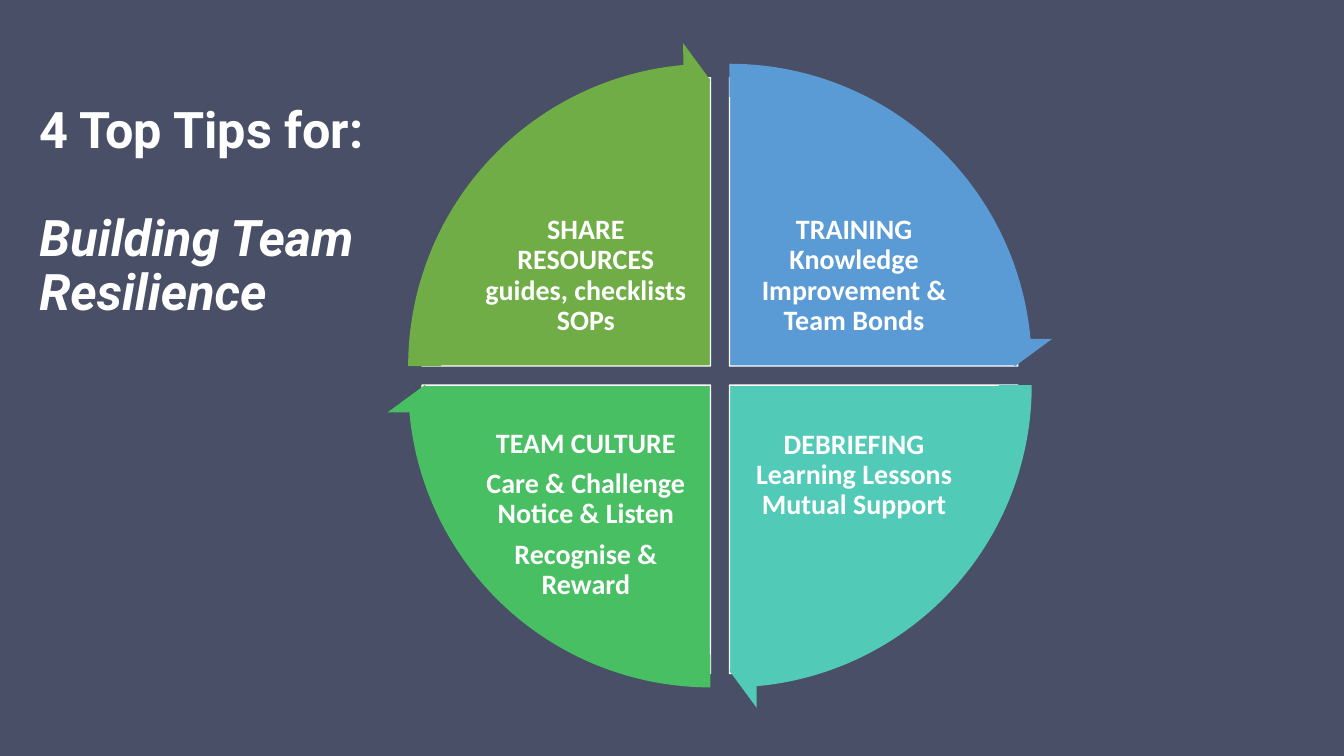
from pptx import Presentation
from pptx.dml.color import RGBColor
from pptx.enum.shapes import MSO_SHAPE
from pptx.enum.text import MSO_ANCHOR, MSO_AUTO_SIZE, PP_ALIGN
from pptx.util import Cm, Pt

NAVY = RGBColor(0x49, 0x4F, 0x66)
WHITE = RGBColor(0xFF, 0xFF, 0xFF)
BLUE = RGBColor(0x5B, 0x9B, 0xD5)
TEAL = RGBColor(0x52, 0xCA, 0xB8)
GREEN = RGBColor(0x49, 0xBF, 0x64)
OLIVE = RGBColor(0x70, 0xAD, 0x47)

TURN = 216  # full circle in adjustment units
STEP = TURN / 4
HEAD = 3.275  # angle taken by an arrowhead

# Clockwise from top right: side x, side y, colour, text drop in cm, text
PARTS = [
    (1, -1, BLUE, 0, ["TRAINING Knowledge Improvement & Team Bonds"]),
    (1, 1, TEAL, 0, ["DEBRIEFING Learning Lessons Mutual Support"]),
    (-1, 1, GREEN, 1, ["TEAM CULTURE", "Care & Challenge Notice & Listen",
                       "Recognise & Reward"]),
    (-1, -1, OLIVE, 0, ["SHARE RESOURCES guides, checklists SOPs"]),
]

TITLE = {"name": "Roboto", "size": Pt(36), "bold": True}
LABEL = {"name": "Calibri", "size": Pt(20), "bold": True}


def style(font, form):
    for key, value in form.items():
        setattr(font, key, value)
    font.color.rgb = WHITE


def set_frame(frame, inset):
    form = {"word_wrap": True, "auto_size": MSO_AUTO_SIZE.NONE,
            "vertical_anchor": MSO_ANCHOR.MIDDLE}
    for side in ("left", "right"):
        form["margin_" + side] = Cm(inset)
    for side in ("top", "bottom"):
        form["margin_" + side] = Cm(inset / 2 if inset > 0.1 else inset)
    for key, value in form.items():
        setattr(frame, key, value)


def write(frame, lines, form, align, **gaps):
    for i, line in enumerate(lines):
        para = frame.paragraphs[0] if i == 0 else frame.add_paragraph()
        para.alignment = align
        para.line_spacing = 0.9
        for key, value in gaps.items():
            setattr(para, key, value)
        run = para.add_run()
        run.text = line
        style(run.font, form)


def add_title(slide, left, top, width, height):
    title = slide.shapes.title
    title.left, title.top = Cm(left), Cm(top)
    title.width, title.height = Cm(width), Cm(height)
    frame = title.text_frame
    set_frame(frame, 0.25)
    write(frame, ["4 Top Tips for:", "Building Team Resilience"],
          TITLE, PP_ALIGN.LEFT)
    last = frame.paragraphs[1]
    last.space_before = Pt(38)
    last.runs[0].font.italic = True


def add_round(slide, kind, mid_x, mid_y, size, fill, adjust):
    shape = slide.shapes.add_shape(kind, Cm(mid_x - size / 2),
                                   Cm(mid_y - size / 2), Cm(size), Cm(size))
    shape.shadow.inherit = False
    shape.fill.solid()
    shape.fill.fore_color.rgb = fill
    for i, value in enumerate(adjust):
        shape.adjustments[i] = value
    return shape


def add_wheel(slide, left, top, size):
    mid_x, mid_y = left + size / 2, top + size / 2
    gap = 0.24  # shift of each quarter from the middle
    pie_size = size - 2 * gap
    wide, high = 5.36, 3.99

    # Quarters with their labels
    for i, (dx, dy, fill, drop, lines) in enumerate(PARTS):
        start = (162 + i * STEP) % TURN
        pie = add_round(slide, MSO_SHAPE.PIE, mid_x + dx * gap,
                        mid_y + dy * gap, pie_size, fill,
                        (start, (start + STEP) % TURN))
        pie.line.color.rgb = WHITE
        pie.line.width = Pt(1)

        box = slide.shapes.add_textbox(
            Cm(mid_x + dx * 3.38 - wide / 2),
            Cm(mid_y + dy * 2.51 - high / 2 + drop), Cm(wide), Cm(high))
        set_frame(box.text_frame, 0.08)
        write(box.text_frame, lines, LABEL, PP_ALIGN.CENTER,
              space_after=Pt(7))

    # Arrows along the rim
    for i, (dx, dy, fill, _, _) in enumerate(PARTS):
        start = (162 + i * STEP) % TURN
        arrow = add_round(slide, MSO_SHAPE.CIRCULAR_ARROW, mid_x + dx * gap,
                          mid_y + dy * gap, pie_size + 1.8, fill,
                          (0.051, HEAD, start + STEP - HEAD, start, 0.059))
        arrow.line.fill.background()


def main():
    deck = Presentation()
    deck.slide_width, deck.slide_height = Cm(33.87), Cm(19.05)
    slide = deck.slides.add_slide(deck.slide_layouts[5])
    back = slide.background.fill
    back.solid()
    back.fore_color.rgb = NAVY
    add_title(slide, 0.74, 1.75, 8.89, 7.24)
    add_wheel(slide, 10.64, 1.96, 15.01)
    deck.save("out.pptx")


if __name__ == "__main__":
    main()
